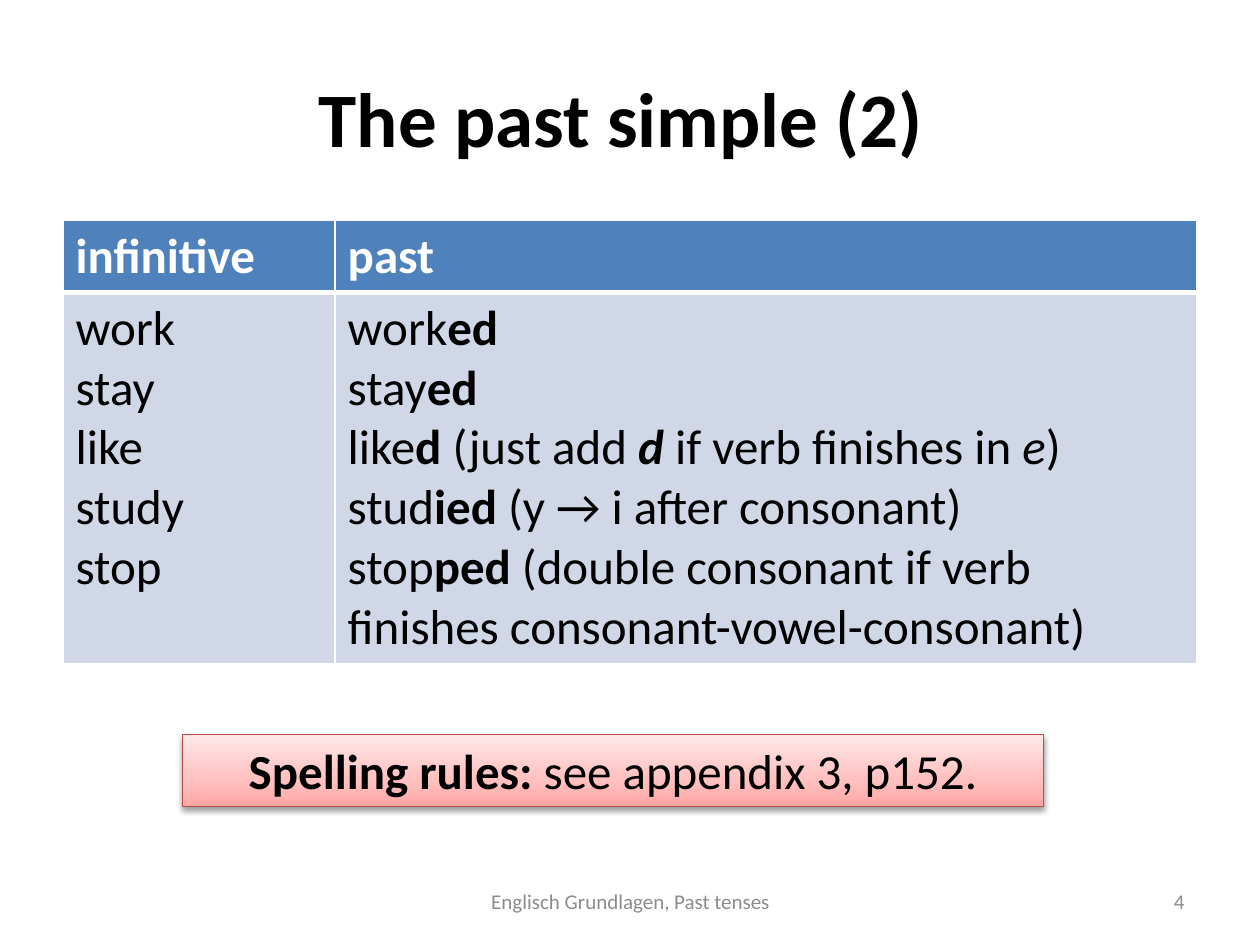
from lxml import etree
from pptx import Presentation
from pptx.dml.color import RGBColor
from pptx.enum.shapes import MSO_SHAPE
from pptx.enum.text import MSO_ANCHOR, PP_ALIGN
from pptx.oxml.ns import qn
from pptx.util import Inches, Pt

RECT = MSO_SHAPE.RECTANGLE
MIDDLE, TOP = MSO_ANCHOR.MIDDLE, MSO_ANCHOR.TOP
LEFT, CENTER, RIGHT = PP_ALIGN.LEFT, PP_ALIGN.CENTER, PP_ALIGN.RIGHT
BLACK = RGBColor(0x00, 0x00, 0x00)
WHITE = RGBColor(0xFF, 0xFF, 0xFF)
GREY = RGBColor(0x8C, 0x8C, 0x8C)
BLUE = RGBColor(0x4F, 0x81, 0xBD)
PALE = RGBColor(0xD0, 0xD8, 0xE8)
RED = RGBColor(0xBF, 0x4C, 0x48)
PINKS = [
    (0, RGBColor(0xFF, 0xA6, 0xA5)),
    (35, RGBColor(0xFF, 0xC0, 0xBF)),
    (100, RGBColor(0xFF, 0xE7, 0xE7)),
]

VERBS = ["work", "stay", "like", "study", "stop"]
PASTS = [
    [("work", ""), ("ed", "b")],
    [("stay", ""), ("ed", "b")],
    [("like", ""), ("d ", "b"), ("(just add ", ""), ("d ", "bi"),
     ("if verb finishes in ", ""), ("e", "i"), (")", "")],
    [("stud", ""), ("ied ", "b"), ("(y → i after consonant)", "")],
    [("stop", ""), ("ped ", "b"),
     ("(double consonant if verb finishes consonant-vowel-consonant)", "")],
]


def node(parent, tag, **attrs):
    return etree.SubElement(parent, qn(tag), {k: str(v) for k, v in attrs.items()})


def tint(parent, color):
    return node(parent, "a:srgbClr", val=color)


class Page:
    font = "Calibri"

    def __init__(self, slide):
        self.slide = slide

    def put(self, frame, lines, size, color=BLACK, align=LEFT):
        frame.word_wrap = True
        for i, runs in enumerate(lines):
            para = frame.add_paragraph() if i else frame.paragraphs[0]
            para.alignment = align
            for text, style in runs:
                run = para.add_run()
                run.text = text
                font = run.font
                font.name, font.size = self.font, Pt(size)
                font.bold, font.italic = "b" in style, "i" in style
                font.color.rgb = color

    def text(self, box, runs, size, color, align):
        shape = self.slide.shapes.add_textbox(*map(Inches, box))
        frame = shape.text_frame
        self.put(frame, [runs], size, color, align)
        frame.vertical_anchor = MIDDLE

    def border(self, cell, top, bottom):
        props = cell._tc.get_or_add_tcPr()
        for side, width in zip("LRTB", (1, 1, top, bottom)):
            line = node(props, f"a:ln{side}", w=Pt(width))
            tint(node(line, "a:solidFill"), WHITE)

    def table(self, box, widths, rows):
        frame = self.slide.shapes.add_table(len(rows), len(widths), *map(Inches, box))
        grid = frame.table
        for col, width in zip(grid.columns, widths):
            col.width = Inches(width)
        for r, (height, fill, color, edges, cells) in enumerate(rows):
            grid.rows[r].height = Inches(height)
            for c, lines in enumerate(cells):
                cell = grid.cell(r, c)
                self.border(cell, *edges)
                cell.fill.solid()
                cell.fill.fore_color.rgb = fill
                self.put(cell.text_frame, lines, 28, color)

    def note(self, box, runs):
        shape = self.slide.shapes.add_shape(RECT, *map(Inches, box))
        props = shape._element.spPr
        grad = node(props, "a:gradFill", rotWithShape=1)
        stops = node(grad, "a:gsLst")
        for pos, color in PINKS:
            tint(node(stops, "a:gs", pos=pos * 1000), color)
        node(grad, "a:lin", ang=270 * 60000, scaled=1)
        shape.line.color.rgb = RED
        shape.line.width = Pt(0.75)
        shape.shadow.inherit = False
        glow = node(props.find(qn("a:effectLst")), "a:outerShdw", blurRad=Pt(3.1),
                    dist=Pt(1.6), dir=90 * 60000, rotWithShape=0)
        node(tint(glow, BLACK), "a:alpha", val=38000)
        self.put(shape.text_frame, [runs], 28, BLACK, CENTER)
        shape.text_frame.vertical_anchor = TOP


def main():
    deck = Presentation()
    deck.slide_width, deck.slide_height = Inches(10), Inches(7.5)
    page = Page(deck.slides.add_slide(deck.slide_layouts[6]))
    page.text((0.5, 0.3, 9, 1.25), [("The past simple (2) ", "b")], 44, BLACK, CENTER)
    heads = [[[(word, "b")]] for word in ("infinitive", "past")]
    verbs = [[(verb, "")] for verb in VERBS]
    page.table((0.5, 1.75, 9, 3.52), (2.16, 6.84), [
        (0.57, BLUE, WHITE, (1, 3), heads),
        (2.95, PALE, BLACK, (3, 1), [verbs, PASTS]),
    ])
    page.note((1.45, 5.83, 6.83, 0.57),
              [("Spelling rules: ", "b"), ("see appendix 3, p152.", "")])
    page.text((7.17, 6.95, 2.33, 0.4), [("4", "")], 12, GREY, RIGHT)
    page.text((3.42, 6.95, 3.17, 0.4),
              [("Englisch Grundlagen, Past tenses", "")], 12, GREY, CENTER)
    deck.save("out.pptx")


if __name__ == "__main__":
    main()
